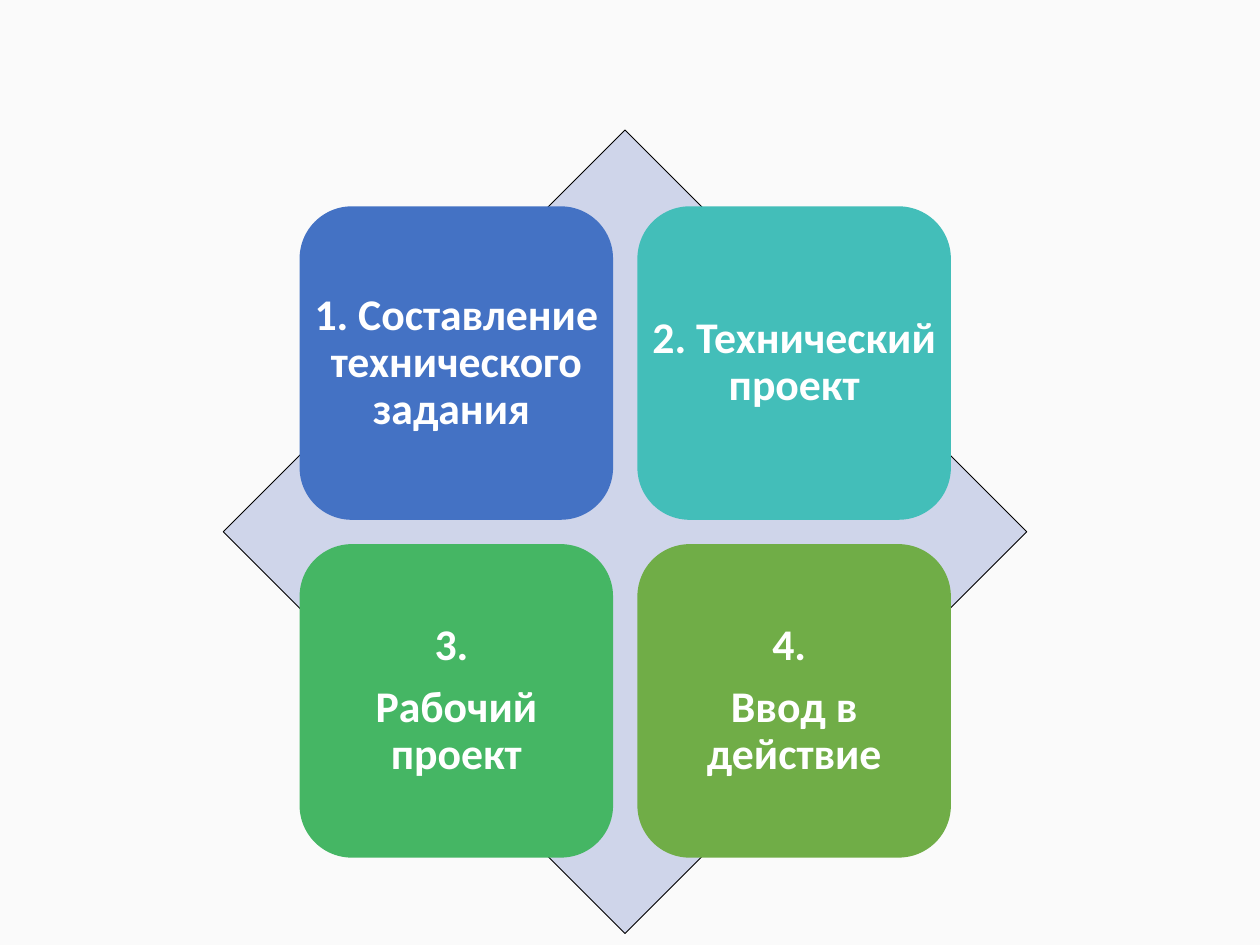
from pptx import Presentation
from pptx.dml.color import RGBColor
from pptx.enum.shapes import MSO_SHAPE
from pptx.enum.text import MSO_ANCHOR, PP_ALIGN
from pptx.util import Cm, Pt

DIAMOND = MSO_SHAPE.DIAMOND
ROUNDED = MSO_SHAPE.ROUNDED_RECTANGLE
MIDDLE = MSO_ANCHOR.MIDDLE
CENTER = PP_ALIGN.CENTER

COLORS = {
    "background": "FAFAFA",
    "diamond": "CFD5EA",
    "outline": "000000",
    "text": "FFFFFF",
    "blue": "4472C4",
    "teal": "43BEB9",
    "green": "45B664",
    "olive": "70AD47",
}


def color(name):
    return RGBColor.from_string(COLORS[name])


def add_text(tf, text, first=False, size=25, font="Calibri", bold=True, fill="text"):
    p = tf.paragraphs[0] if first else tf.add_paragraph()
    p.alignment = CENTER
    p.line_spacing = 0.9
    p.space_after = Pt(0.35 * size)
    r = p.add_run()
    r.text = text
    r.font.size = Pt(size)
    r.font.name = font
    r.font.bold = bold
    r.font.color.rgb = color(fill)


prs = Presentation()
prs.slide_width, prs.slide_height = Cm(25.4), Cm(19.05)
s = prs.slides.add_slide(prs.slide_layouts[6])
s.background.fill.solid()
s.background.fill.fore_color.rgb = color("background")

diamond = s.shapes.add_shape(DIAMOND, Cm(4.5), Cm(2.62), Cm(16.2), Cm(16.2))
diamond.shadow.inherit = False
diamond.fill.solid()
diamond.fill.fore_color.rgb = color("diamond")
diamond.line.color.rgb = color("outline")
diamond.line.width = Pt(0.5)

LEFT, TOP, SIDE, STEP = 6.04, 4.16, 6.32, 6.81
stages = [
    ("blue", ["1. Составление технического задания "]),
    ("teal", ["2. Технический проект"]),
    ("green", ["3. ", "Рабочий проект"]),
    ("olive", ["4. ", "Ввод в действие"]),
]

for i, (fill, lines) in enumerate(stages):
    row, col = divmod(i, 2)
    box = Cm(LEFT + col * STEP), Cm(TOP + row * STEP), Cm(SIDE), Cm(SIDE)
    tile = s.shapes.add_shape(ROUNDED, *box)
    tile.shadow.inherit = False
    tile.fill.solid()
    tile.fill.fore_color.rgb = color(fill)
    tile.line.fill.background()

    tf = s.shapes.add_textbox(*box).text_frame
    tf.word_wrap = True
    tf.vertical_anchor = MIDDLE
    tf.margin_left = tf.margin_right = tf.margin_top = tf.margin_bottom = Cm(0.25)
    for n, line in enumerate(lines):
        add_text(tf, line, first=n == 0)

prs.save("out.pptx")
